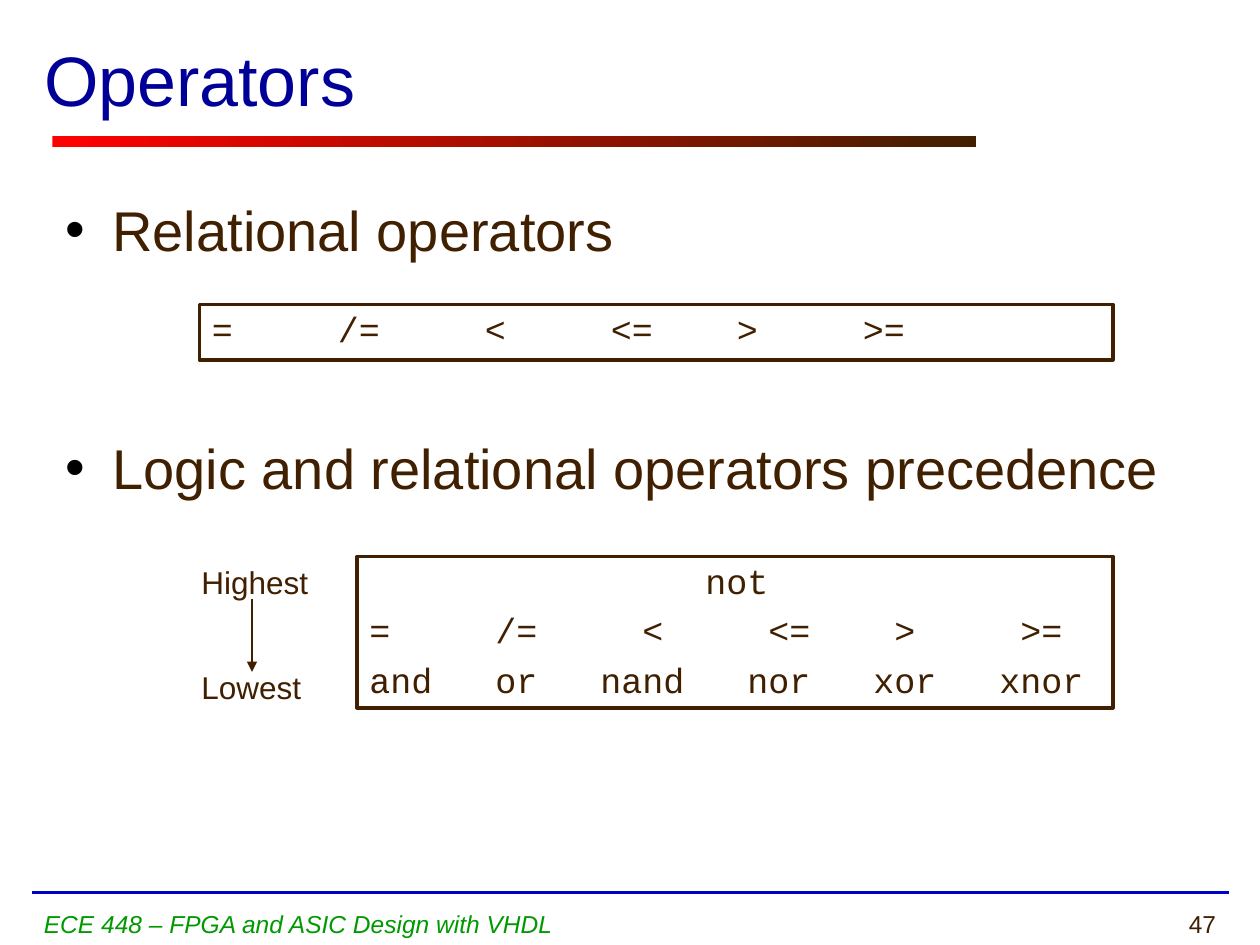
from lxml.etree import SubElement
from pptx import Presentation
from pptx.dml.color import RGBColor
from pptx.enum.shapes import MSO_CONNECTOR as CONN, MSO_SHAPE as SHAPE
from pptx.enum.text import MSO_ANCHOR as ANCHOR, MSO_AUTO_SIZE as AUTO, PP_ALIGN as ALIGN
from pptx.oxml.ns import qn
from pptx.util import Pt

BROWN = RGBColor(0x40, 0x20, 0x00)
NAVY = RGBColor(0x00, 0x00, 0x99)
BLUE = RGBColor(0x00, 0x00, 0xCC)
GREEN = RGBColor(0x00, 0x99, 0x00)
RED = RGBColor(0xFF, 0x00, 0x00)

CHAR = 12  # advance of one 20 pt Courier New character
RELATIONAL = ["=", "/=", "<", "<=", ">", ">="]
LOGIC = ["and", "or", "nand", "nor", "xor", "xnor"]
RELATIONAL_COLS = [6, 13, 19, 25, 31]
LOGIC_COLS = [6, 11, 18, 24, 30]


def write(p, text, size=18, font="Arial", color=BROWN, italic=False,
          align=ALIGN.LEFT, before=0, spacing=None):
    """Put formatted text into a paragraph."""
    p.alignment = align
    p.space_before = Pt(before)
    if spacing:
        p.line_spacing = spacing
    r = p.add_run()
    r.text = text
    r.font.size, r.font.name = Pt(size), font
    r.font.color.rgb, r.font.italic = color, italic


def add_tabs(p, columns):
    """Set left tab stops, counted in characters."""
    tabs = SubElement(p._p.get_or_add_pPr(), qn("a:tabLst"))
    for col in columns:
        SubElement(tabs, qn("a:tab"), pos=str(Pt(col * CHAR)), algn="l")


def paragraphs(tf, count):
    """Return the frame's first paragraph and as many more as needed."""
    return [tf.paragraphs[0]] + [tf.add_paragraph() for _ in range(count - 1)]


class SlideBuilder:
    def __init__(self, slide):
        self.s = slide

    def placeholder(self, index, x, y, w, h, anchor):
        sp = self.s.placeholders[index]
        sp.left, sp.top, sp.width, sp.height = Pt(x), Pt(y), Pt(w), Pt(h)
        tf = sp.text_frame
        tf.auto_size, tf.vertical_anchor = AUTO.NONE, anchor
        return tf

    def title(self, text, *box):
        tf = self.placeholder(0, *box, ANCHOR.MIDDLE)
        write(tf.paragraphs[0], text, size=40, color=NAVY)

    def bullets(self, items, *box):
        tf = self.placeholder(1, *box, ANCHOR.TOP)
        for p, (text, before) in zip(paragraphs(tf, len(items)), items):
            write(p, text, size=32, before=before)
            pPr = p._p.get_or_add_pPr()
            pPr.set("marL", str(Pt(27)))
            pPr.set("indent", str(Pt(-27)))
            SubElement(SubElement(pPr, qn("a:buClr")), qn("a:srgbClr"), val="000000")
            SubElement(pPr, qn("a:buChar"), char="•")

    def label(self, text, x, y, w, h, wrap=True, **style):
        tf = self.s.shapes.add_textbox(Pt(x), Pt(y), Pt(w), Pt(h)).text_frame
        tf.word_wrap = wrap
        write(tf.paragraphs[0], text, **style)

    def rect(self, x, y, w, h):
        sp = self.s.shapes.add_shape(SHAPE.RECTANGLE, Pt(x), Pt(y), Pt(w), Pt(h))
        sp.shadow.inherit = False
        return sp

    def gradient_bar(self, x, y, w, h, colors):
        sp = self.rect(x, y, w, h)
        sp.line.fill.background()
        sp.fill.gradient()
        sp.fill.gradient_angle = 0
        for stop, position, color in zip(sp.fill.gradient_stops, (0, 1), colors):
            stop.position, stop.color.rgb = position, color

    def code_box(self, rows, *box):
        sp = self.rect(*box)
        sp.fill.background()
        sp.line.color.rgb, sp.line.width = BROWN, Pt(2)
        tf = sp.text_frame
        tf.word_wrap, tf.vertical_anchor = True, ANCHOR.TOP
        for i, (p, (text, columns)) in enumerate(zip(paragraphs(tf, len(rows)), rows)):
            write(p, text, size=20, font="Courier New", spacing=0.95,
                  before=5.4 if i else 3)
            add_tabs(p, columns)

    def line(self, x1, y1, x2, y2, color, width, arrow=False):
        c = self.s.shapes.add_connector(CONN.STRAIGHT, Pt(x1), Pt(y1), Pt(x2), Pt(y2))
        c.line.color.rgb, c.line.width = color, Pt(width)
        if arrow:
            SubElement(c.line._get_or_add_ln(), qn("a:tailEnd"), type="triangle")
        SubElement(c._element.spPr, qn("a:effectLst"))


def main():
    prs = Presentation()
    prs.slide_width, prs.slide_height = Pt(720), Pt(540)
    b = SlideBuilder(prs.slides.add_slide(prs.slide_layouts[1]))

    # Footer and title rule
    b.line(18, 510, 702, 510, BLUE, 2.25)
    b.gradient_bar(30, 78, 528, 6, (RED, BROWN))
    b.label("47", 546, 516, 156, 24, size=14, align=ALIGN.RIGHT)
    b.label("ECE 448 – FPGA and ASIC Design with VHDL", 18, 516, 528, 24,
            size=14, color=GREEN, italic=True)

    # Title and bullets
    b.title("Operators", 18, 0, 660, 90)
    b.bullets([("Relational operators", 3),
               ("Logic and relational operators precedence", 97.5)],
              30, 108, 660, 396)

    # Operator boxes
    relational = ("\t".join(RELATIONAL), RELATIONAL_COLS)
    logic = ("\t".join(LOGIC), LOGIC_COLS)
    b.code_box([relational], 114, 174, 522, 31.7)
    b.code_box([("\tnot", [16]), relational, logic], 204, 318, 432, 86.5)

    # Precedence scale
    b.label("Highest", 108, 318, 75.6, 28.8, wrap=False)
    b.label("Lowest", 108, 378, 71.3, 28.8, wrap=False)
    b.line(144, 342, 144, 384, BROWN, 0.75, arrow=True)

    prs.save("out.pptx")


if __name__ == "__main__":
    main()
